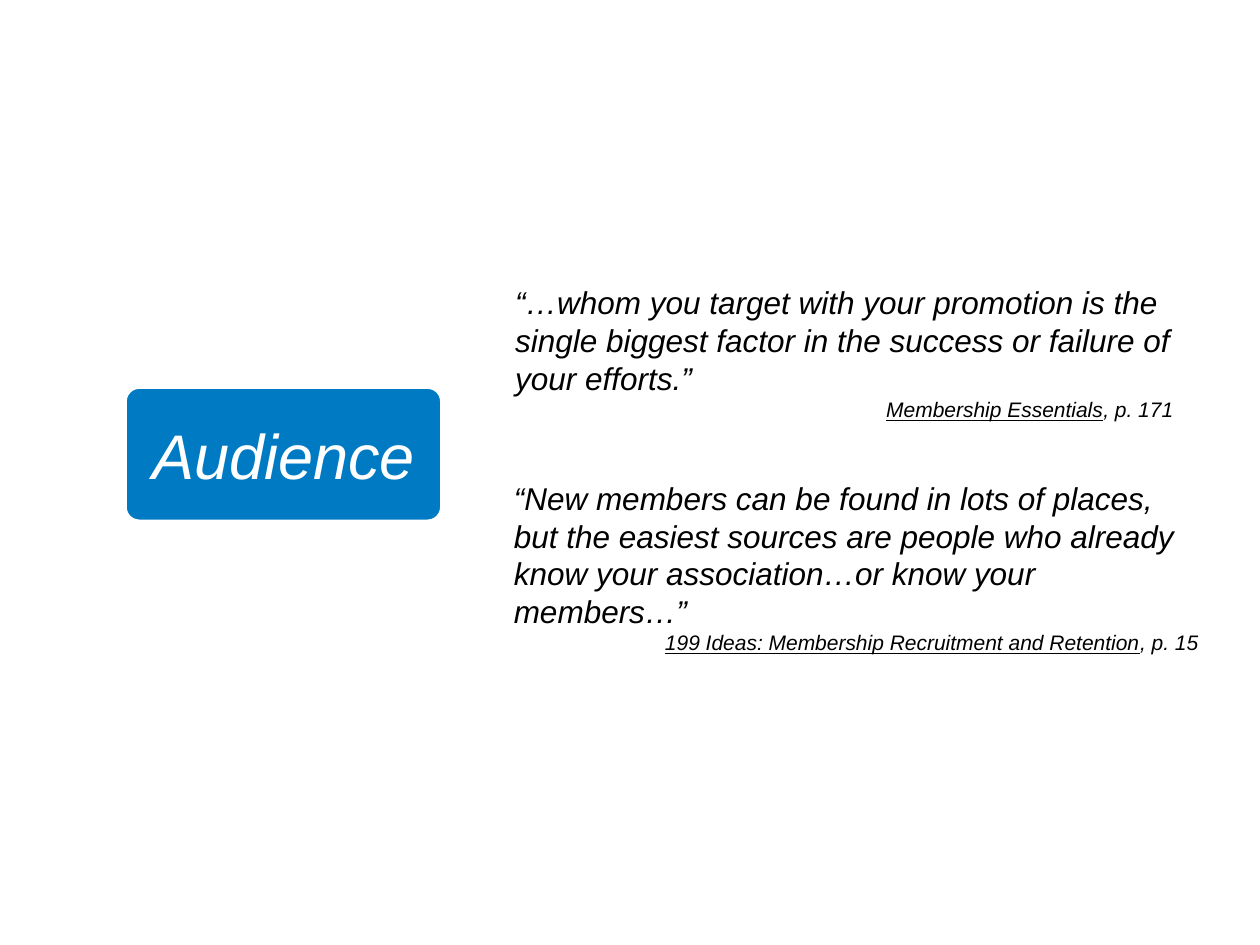
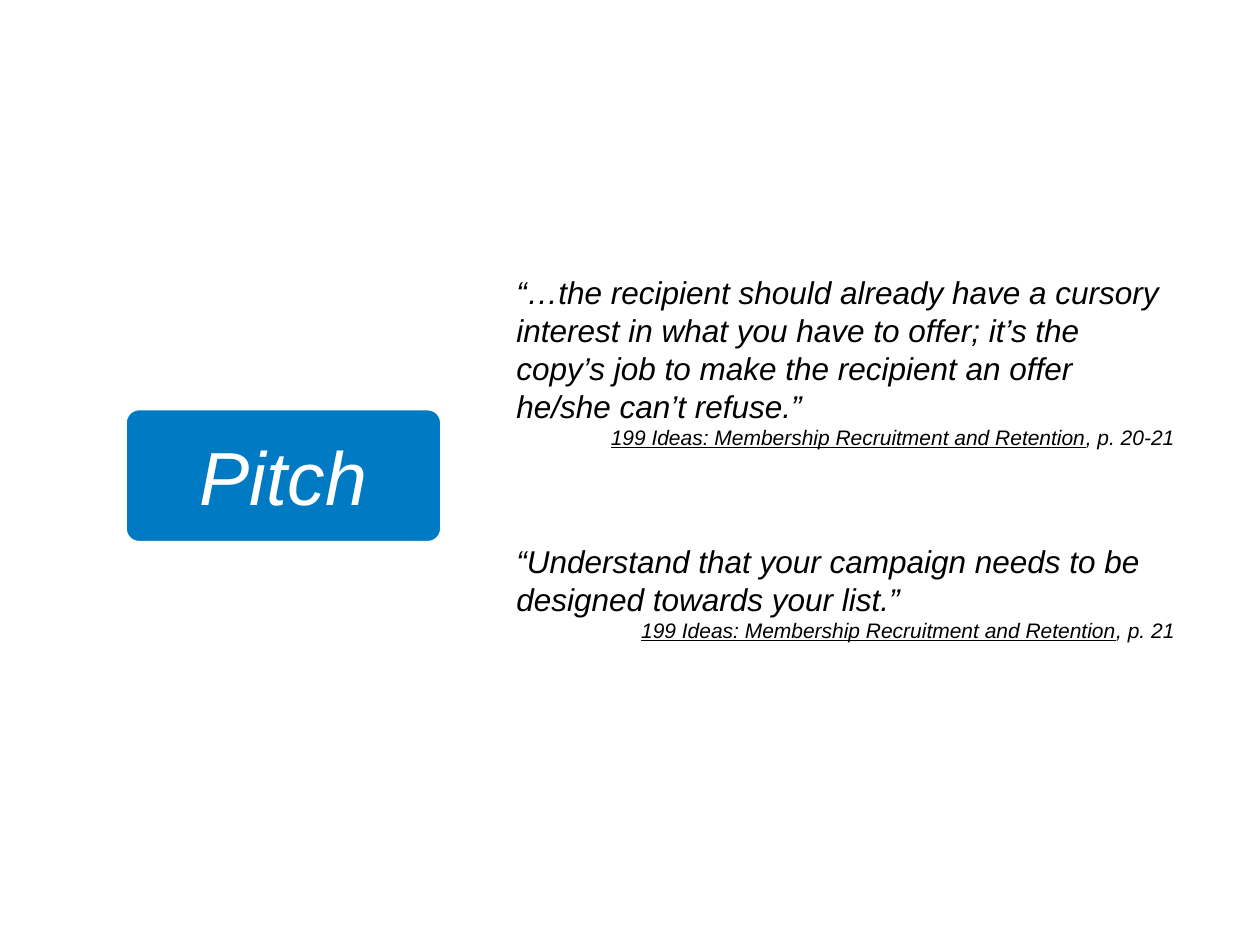
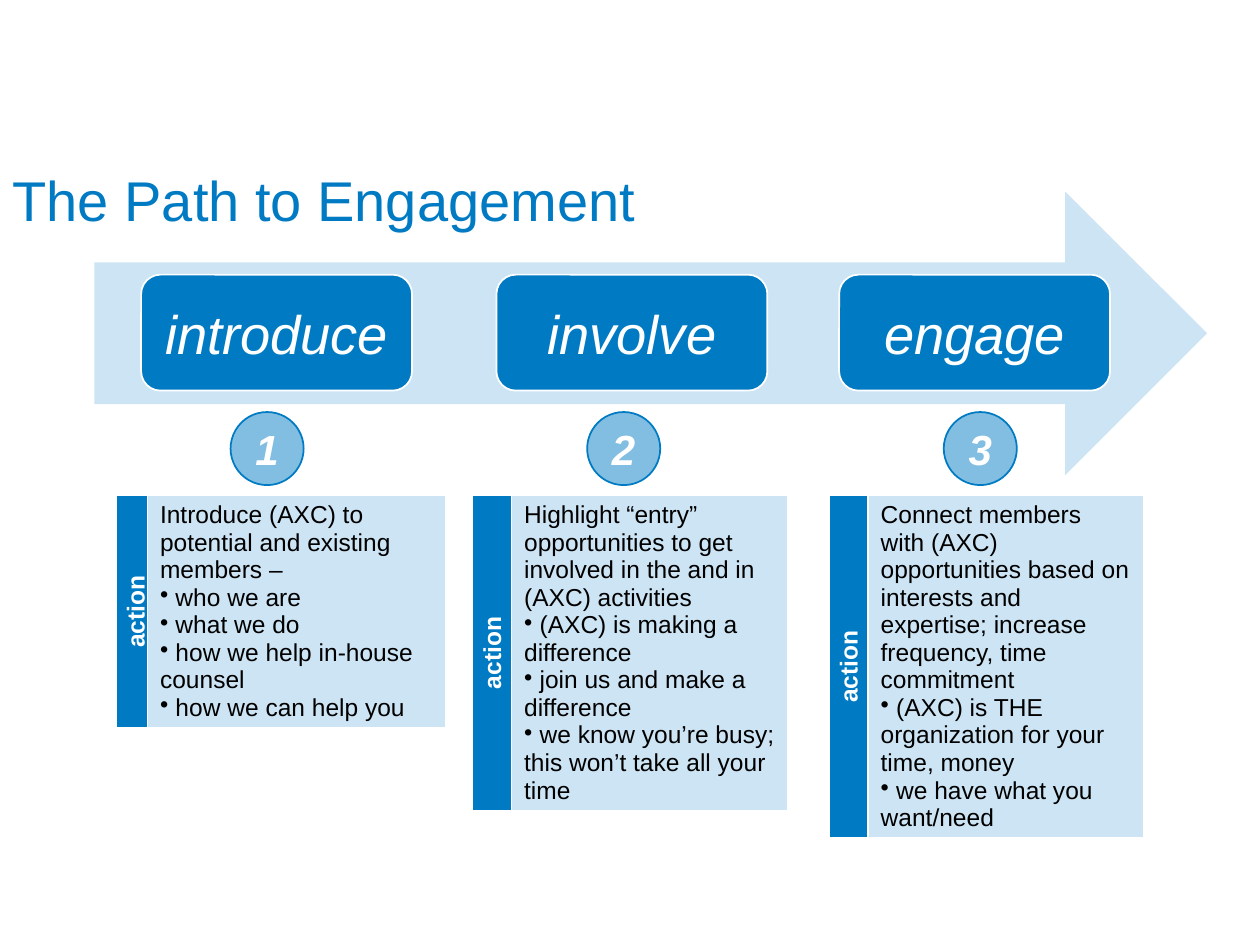
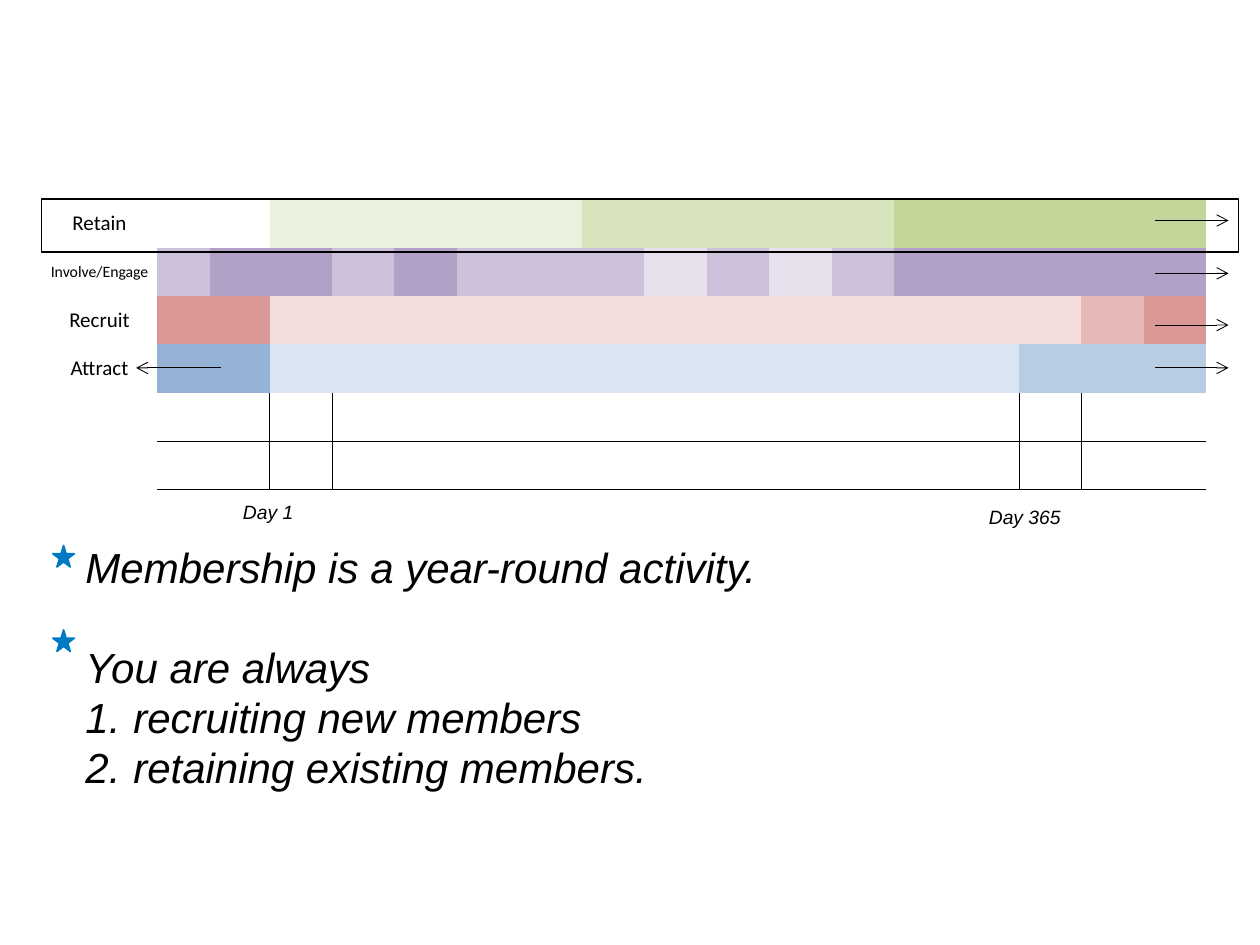
from itertools import chain, repeat

from lxml import etree
from pptx import Presentation
from pptx.dml.color import RGBColor
from pptx.enum.shapes import MSO_CONNECTOR, MSO_SHAPE
from pptx.enum.text import MSO_ANCHOR, PP_ALIGN
from pptx.oxml.ns import qn
from pptx.util import Inches, Pt

ROUND, RECT, OVAL = MSO_SHAPE.ROUNDED_RECTANGLE, MSO_SHAPE.RECTANGLE, MSO_SHAPE.OVAL
ARROW, STAR = MSO_SHAPE.RIGHT_ARROW, MSO_SHAPE.STAR_5_POINT
LINE = MSO_CONNECTOR.STRAIGHT
LEFT, CENTER, RIGHT = PP_ALIGN.LEFT, PP_ALIGN.CENTER, PP_ALIGN.RIGHT
TOP, MIDDLE = MSO_ANCHOR.TOP, MSO_ANCHOR.MIDDLE

BLUE, WHITE, BLACK = "007BC3", "FFFFFF", "000000"
PLAIN_TABLE = "{2D5ABB26-0587-4C30-8999-92F81FD0307C}"
SIDES = ("a:lnL", "a:lnR", "a:lnT", "a:lnB")
IDEAS = "199 Ideas: Membership Recruitment and Retention"

QUOTE_SLIDES = [
    ("Audience", 36, 3.08, [
        ((3.99, 2.2, 5.42, 1.21),
         "“…whom you target with your promotion is the single biggest factor in the "
         "success or failure of your efforts.”", "Membership Essentials", ", p. 171"),
        ((3.98, 3.75, 5.63, 1.51),
         "“New members can be found in lots of places, but the easiest sources are people "
         "who already know your association…or know your members…”", IDEAS, ", p. 15"),
    ]),
    ("Pitch", 43, 3.25, [
        ((4, 2.12, 5.42, 1.51),
         "“…the recipient should already have a cursory interest in what you have to offer; "
         "it’s the copy’s job to make the recipient an offer he/she can’t refuse.”",
         IDEAS, ", p. 20-21"),
        ((4, 4.25, 5.42, 0.91),
         "“Understand that your campaign needs to be designed towards your list.”",
         IDEAS, ", p. 21"),
    ]),
]

STEPS = [
    ("introduce", 1.12, (0.25, 2.37), 1.84,
     "Introduce (AXC) to potential and existing members –",
     ["who we are", "what we do", "how we help in-house counsel", "how we can help you"]),
    ("involve", 3.94, (0.31, 2.19), 2.49,
     "Highlight “entry” opportunities to get involved in the and in (AXC) activities",
     ["(AXC) is making a difference", "join us and make a difference",
      "we know you’re busy; this won’t take all your time"]),
    ("engage", 6.66, (0.31, 2.19), 2.71,
     "Connect members with (AXC) opportunities based on interests and expertise; "
     "increase frequency, time commitment",
     ["(AXC) is THE organization for your time, money", "we have what you want/need"]),
]

ACTIVITIES = [
    ("Retain", 12, [(None, 2), ("EAF1DD", 5), ("D7E4BC", 5), ("C2D69A", 5)]),
    ("Involve/Engage", 9, [("CCC0DA", 1), ("B2A1C7", 2), ("CCC0DA", 1), ("B2A1C7", 1),
                           ("CCC0DA", 3), ("E5E0EC", 1), ("CCC0DA", 1), ("E5E0EC", 1),
                           ("CCC0DA", 1), ("B2A1C7", 5)]),
    ("Recruit", 12, [("D99795", 2), ("F2DDDC", 13), ("E6B9B8", 1), ("D99795", 1)]),
    ("Attract", 12, [("95B3D7", 2), ("DBE5F1", 12), ("B8CCE4", 3)]),
]


def rgb(color):
    """Turn a hex string into a colour."""
    return RGBColor.from_string(color)


def inches(*lengths):
    """Convert several lengths to inches."""
    return [Inches(n) for n in lengths]


def paint(fill, element, color, alpha=None):
    """Fill solidly, with opacity in percent where given."""
    fill.solid()
    fill.fore_color.rgb = rgb(color)
    if alpha:
        clr = next(element.iter(qn("a:srgbClr")))
        etree.SubElement(clr, qn("a:alpha"), val=str(alpha * 1000))


def add_run(p, text, size, color=BLACK, font="Arial", bold=False, italic=False, underline=False):
    """Append a formatted run to a paragraph."""
    r = p.add_run()
    r.text = text
    f = r.font
    f.name, f.size, f.color.rgb = font, Pt(size), rgb(color)
    f.bold, f.italic, f.underline = bold, italic, underline


def add_bullet(p, tag, hang=0, **attrs):
    """Give a paragraph a bullet with a hanging indent."""
    pPr = p._p.get_or_add_pPr()
    pPr.set("marL", str(Inches(hang)))
    pPr.set("indent", str(-Inches(hang)))
    etree.SubElement(pPr, qn(tag), **attrs)


def add_box(s, kind, box, fill=None, line=None, alpha=None):
    """Add a preset shape without shadow."""
    sp = s.shapes.add_shape(kind, *inches(*box))
    sp.shadow.inherit = False
    if fill:
        paint(sp.fill, sp._element, fill, alpha)
    else:
        sp.fill.background()
    if line:
        sp.line.color.rgb = rgb(line)
        sp.line.width = Pt(1)
    else:
        sp.line.fill.background()
    return sp


def add_label(sp, text, size, color=WHITE, bold=False, align=CENTER, anchor=MIDDLE):
    """Write one italic line inside a shape."""
    tf = sp.text_frame
    tf.word_wrap, tf.vertical_anchor = True, anchor
    p = tf.paragraphs[0]
    p.alignment = align
    add_run(p, text, size, color, bold=bold, italic=True)


def add_chip(s, box, text, size, radius=0.1667):
    """Add a blue rounded box holding a keyword."""
    sp = add_box(s, ROUND, box, BLUE, WHITE)
    sp.adjustments[0] = radius
    tf = sp.text_frame
    tf.margin_left = tf.margin_right = 0
    add_label(sp, text, size)


def add_text_frame(s, box):
    """Add a wrapping text box and return its frame."""
    tf = s.shapes.add_textbox(*inches(*box)).text_frame
    tf.word_wrap = True
    return tf


def add_plain_table(s, box, widths, rows):
    """Add a table without style, with equal rows."""
    frame = s.shapes.add_table(rows, len(widths), *inches(*box))
    table = frame.table
    table.first_row = table.horz_banding = False
    next(frame._element.iter(qn("a:tableStyleId"))).text = PLAIN_TABLE
    for column, width in zip(table.columns, widths):
        column.width = Inches(width)
    return table


def add_borders(cell, color, width, sides):
    """Draw the given cell sides, listed in schema order."""
    tcPr = cell._tc.get_or_add_tcPr()
    for i, side in enumerate(sides):
        ln = etree.Element(qn(side), w=str(Pt(width)))
        fill = etree.SubElement(ln, qn("a:solidFill"))
        etree.SubElement(fill, qn("a:srgbClr"), val=color)
        tcPr.insert(i, ln)


def add_arrow(s, x1, x2, y):
    """Add a thin horizontal arrow from x1 to x2."""
    cn = s.shapes.add_connector(LINE, *inches(x1, y, x2, y))
    cn.line.color.rgb = rgb(BLACK)
    cn.line.width = Pt(0.5)
    spPr = cn._element.spPr
    etree.SubElement(spPr.find(qn("a:ln")), qn("a:tailEnd"), type="arrow")
    etree.SubElement(spPr, qn("a:effectLst"))


def add_quote(s, box, quote, source, page):
    """Add a quotation with its source at the right."""
    tf = add_text_frame(s, box)
    add_run(tf.paragraphs[0], quote, 18, italic=True)
    p = tf.add_paragraph()
    p.alignment = RIGHT
    add_run(p, source, 12, italic=True, underline=True)
    add_run(p, page, 12, italic=True)


def add_quote_slide(prs, keyword, size, top, quotes):
    """Build a slide with a keyword and quotations."""
    s = prs.slides.add_slide(prs.slide_layouts[6])
    add_chip(s, (1, top, 2.5, 1.05), keyword, size, 0.1)
    for quote in quotes:
        add_quote(s, *quote)


def add_action_table(s, left, top, widths, height, intro, points):
    """Add an action panel with a vertical tab and a list."""
    table = add_plain_table(s, (left, top, sum(widths), height), widths, 1)
    tab, body = table.cell(0, 0), table.cell(0, 1)
    for cell, alpha in ((tab, None), (body, 20)):
        paint(cell.fill, cell._tc, BLUE, alpha)
        add_borders(cell, WHITE, 1, SIDES)
    tab.vertical_anchor = MIDDLE
    tab._tc.tcPr.set("vert", "vert270")
    p = tab.text_frame.paragraphs[0]
    p.alignment = CENTER
    add_run(p, "action", 14, WHITE, bold=True)
    tf = body.text_frame
    add_run(tf.paragraphs[0], intro, 14)
    for point in points:
        p = tf.add_paragraph()
        add_bullet(p, "a:buChar", char="•")
        add_run(p, " " + point, 14)


def add_path_slide(prs):
    """Build the three-step path to engagement."""
    s = prs.slides.add_slide(prs.slide_layouts[5])
    add_box(s, ARROW, (0.75, 1.52, 8.83, 2.25), BLUE, alpha=20)
    for i, (name, chip_left, widths, height, intro, points) in enumerate(STEPS):
        left = 0.92 + 2.83 * i
        add_chip(s, (chip_left, 2.18, 2.15, 0.92), name, 31)
        add_action_table(s, left, 3.93, widths, height, intro, points)
        circle = add_box(s, OVAL, (left + 0.91, 3.27, 0.58, 0.58), BLUE, BLUE, 49)
        add_label(circle, str(i + 1), 24, bold=True)
    title = s.shapes.title
    title.left, title.top, title.width, title.height = inches(0, 1.08, 10, 1)
    tf = title.text_frame
    tf.vertical_anchor = MIDDLE
    p = tf.paragraphs[0]
    p.alignment = LEFT
    add_run(p, "The Path to Engagement", 32, BLUE)


def add_year_grid(s, left, top, width, height):
    """Add the activity grid with its day axis."""
    lead = [0.92, 0.42, 0.47]
    widths = lead + [(width - sum(lead)) / 15] * 15
    table = add_plain_table(s, (left, top, width, height), widths, 8)
    for cell in table.iter_cells():
        cell.margin_left = cell.margin_right = cell.margin_top = cell.margin_bottom = 0
    for row, (name, size, spans) in enumerate(ACTIVITIES):
        cell = table.cell(row, 0)
        cell.vertical_anchor = MIDDLE
        p = cell.text_frame.paragraphs[0]
        p.alignment = CENTER
        add_run(p, name, size, font="Calibri")
        colors = chain.from_iterable(repeat(color, count) for color, count in spans)
        for col, color in enumerate(colors, 1):
            if color:
                cell = table.cell(row, col)
                paint(cell.fill, cell._tc, color)
    for row, axis_side in ((4, "a:lnB"), (5, "a:lnT")):
        for col in range(1, len(widths)):
            day_side = {2: ["a:lnR"], 14: ["a:lnR"], 3: ["a:lnL"], 15: ["a:lnL"]}.get(col, [])
            add_borders(table.cell(row, col), BLACK, 0.5, day_side + [axis_side])


def add_messages(s, left, top, width, height):
    """Add the starred messages below the grid."""
    tf = add_text_frame(s, (left, top, width, height))
    add_run(tf.paragraphs[0], "Membership is a year-round activity.", 24, italic=True)
    p = tf.add_paragraph()
    p.space_before = Pt(28)
    add_run(p, "You are always", 24, italic=True)
    for item in ("recruiting new members", "retaining existing members."):
        p = tf.add_paragraph()
        add_bullet(p, "a:buAutoNum", 0.38, type="arabicPeriod")
        add_run(p, item, 24, italic=True)
    for offset in (0.08, 0.75):
        add_box(s, STAR, (left - 0.16, top + offset, 0.17, 0.17), BLUE, BLUE)


def add_year_slide(prs):
    """Build the membership year."""
    s = prs.slides.add_slide(prs.slide_layouts[6])
    add_year_grid(s, 0.33, 1.58, 9.25, 3.08)
    for left, top, day in ((7.75, 3.96, "Day 365"), (1.83, 3.92, "Day 1")):
        sp = add_box(s, RECT, (left, top, 0.77, 0.29), WHITE)
        add_label(sp, day, 11, BLACK, align=LEFT, anchor=TOP)
    add_arrow(s, 1.75, 1.08, 2.92)
    for y in (1.75, 2.17, 2.58, 2.92):
        add_arrow(s, 9.17, 9.75, y)
    add_messages(s, 0.58, 4.25, 9.08, 1.99)
    add_box(s, RECT, (0.33, 1.58, 9.5, 0.42), line=BLACK)


def main():
    """Build and save the presentation."""
    prs = Presentation()
    prs.slide_width, prs.slide_height = inches(10, 7.5)
    for content in QUOTE_SLIDES:
        add_quote_slide(prs, *content)
    add_path_slide(prs)
    add_year_slide(prs)
    prs.save("out.pptx")


if __name__ == "__main__":
    main()
